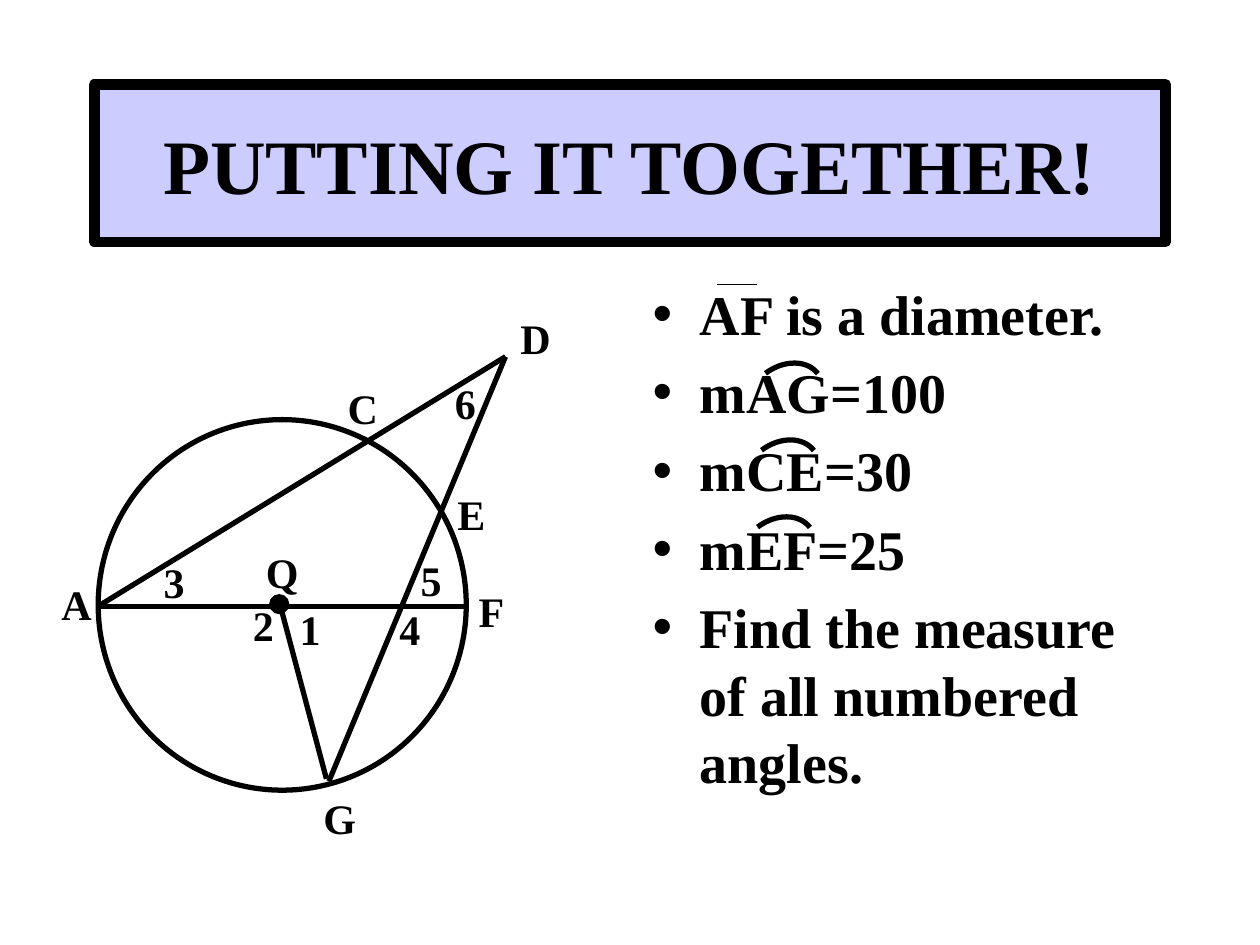
"""Build a geometry slide about arcs and angles in a circle."""
from math import cos, pi, sin

from lxml import etree
from pptx import Presentation
from pptx.dml.color import RGBColor
from pptx.enum.shapes import MSO_CONNECTOR, MSO_SHAPE
from pptx.enum.text import MSO_ANCHOR, MSO_AUTO_SIZE, PP_ALIGN
from pptx.oxml.ns import qn
from pptx.util import Cm, Pt

STRAIGHT = MSO_CONNECTOR.STRAIGHT
OVAL = MSO_SHAPE.OVAL
CENTER, LEFT = PP_ALIGN.CENTER, PP_ALIGN.LEFT
MIDDLE, TOP = MSO_ANCHOR.MIDDLE, MSO_ANCHOR.TOP
NO_FIT, GROW = MSO_AUTO_SIZE.NONE, MSO_AUTO_SIZE.SHAPE_TO_FIT_TEXT
FONT = "Times New Roman"
COLORS = {"ink": "000000", "banner": "CCCCFF"}
INK = RGBColor.from_string(COLORS["ink"])


def write(shape, text, size=24, align=LEFT, anchor=TOP, fit=GROW):
    frame = shape.text_frame
    frame.text = text
    frame.word_wrap = True
    frame.auto_size = fit
    frame.vertical_anchor = anchor
    for paragraph in frame.paragraphs:
        paragraph.alignment = align
        font = paragraph.runs[0].font
        font.name, font.size, font.bold = FONT, Pt(size), True
        font.color.rgb = INK


def draw_line(shapes, start, end, width=3):
    line = shapes.add_connector(STRAIGHT, *map(Cm, start + end))
    line.line.color.rgb = INK
    line.line.width = Pt(width)
    etree.SubElement(line._element.spPr, qn("a:effectLst"))


presentation = Presentation()
presentation.slide_width, presentation.slide_height = Cm(25.4), Cm(19.05)
slide = presentation.slides.add_slide(presentation.slide_layouts[1])

title = slide.shapes.title
title.left, title.top, title.width, title.height = Cm(1.9), Cm(1.7), Cm(21.6), Cm(3.18)
title.fill.solid()
title.fill.fore_color.rgb = RGBColor.from_string(COLORS["banner"])
title.line.color.rgb = INK
title.line.width = Pt(6)
write(title, "PUTTING IT TOGETHER!", size=44, align=CENTER, anchor=MIDDLE, fit=NO_FIT)

facts = ["AF is a diameter.", "mAG=100", "mCE=30", "mEF=25",
         "Find the measure of all numbered angles."]
body = slide.placeholders[1]
body.left, body.top, body.width, body.height = Cm(12.9), Cm(5.5), Cm(10.6), Cm(11.43)
write(body, "\n".join(facts), size=32, fit=NO_FIT)

diagram = slide.shapes.add_group_shape().shapes
circle = diagram.add_shape(OVAL, Cm(1.98), Cm(8.46), Cm(7.42), Cm(7.47))
circle.fill.background()
circle.line.width = Pt(3)

point_a, point_f, point_d = (1.98, 12.22), (9.4, 12.22), (10.19, 7.19)
for start, end in [(point_a, point_f), (point_a, point_d),
                   ((6.63, 15.75), point_d), ((6.58, 15.7), (5.64, 12.17))]:
    draw_line(diagram, start, end)

center_dot = diagram.add_shape(OVAL, Cm(5.44), Cm(11.99), Cm(0.38), Cm(0.38))
center_dot.fill.solid()
center_dot.fill.fore_color.rgb = INK
center_dot.line.width = Pt(0.75)
for oval in (circle, center_dot):
    oval.line.color.rgb = INK
    oval.shadow.inherit = False

labels = {
    "Q": (5.11, 10.9), "G": (6.27, 15.85), "F": (9.4, 11.68), "D": (10.24, 6.17),
    "E": (8.97, 9.73), "C": (6.76, 7.59), "1": (5.79, 12.04), "2": (4.85, 11.96),
    "3": (3.05, 11.1), "4": (7.8, 12.04), "5": (8.23, 11.05), "6": (8.92, 7.49),
    "A": (0.99, 11.53),
}
for text, (left, top) in labels.items():
    write(diagram.add_textbox(Cm(left), Cm(top), Cm(1.32), Cm(1.27)), text)

draw_line(slide.shapes, (14.45, 5.74), (15.27, 5.74), width=0.75)

arc_width, arc_height, steps = 0.84, 0.64, 16
for row in range(3):
    left, top = 15.54 - 0.08 * row, 7.21 + 1.55 * row
    angles = [pi / 2 * step / steps for step in range(steps + 1)]
    points = [(Cm(left + arc_width * sin(angle)), Cm(top + arc_height * (1 - cos(angle))))
              for angle in angles]
    builder = slide.shapes.build_freeform(*points[0])
    builder.add_line_segments(points[1:], close=False)
    arc = builder.convert_to_shape()
    arc.rotation = 323
    arc.fill.background()
    arc.line.color.rgb = INK
    arc.line.width = Pt(3)
    arc.shadow.inherit = False

presentation.save("out.pptx")
